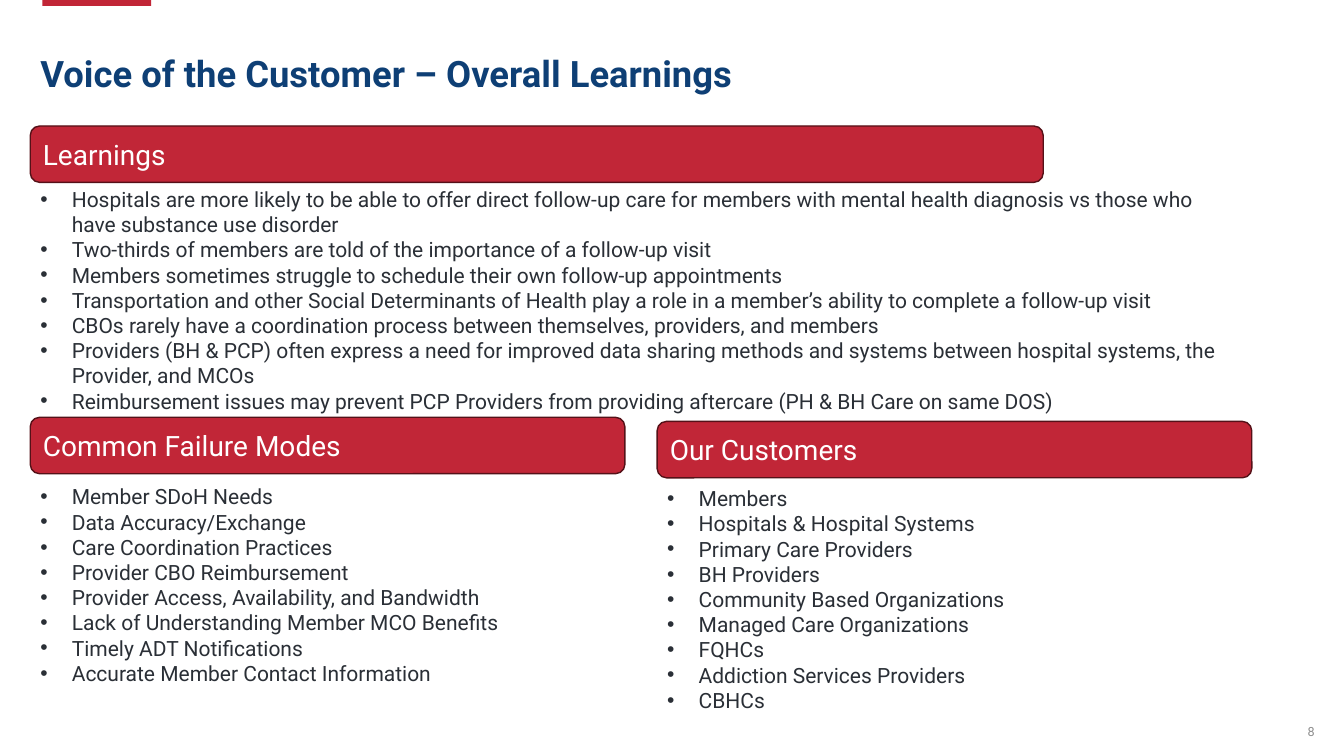
from pptx import Presentation
from pptx.dml.color import RGBColor
from pptx.enum.shapes import MSO_SHAPE as Kind
from pptx.enum.text import MSO_ANCHOR as Anchor, MSO_AUTO_SIZE as Fit, PP_ALIGN as Align
from pptx.oxml.ns import qn
from pptx.util import Pt
from lxml.etree import SubElement

RED, EDGE, NAVY, INK, GRAY, WHITE = "C12637", "551118", "0E3F75", "2A2F36", "8C8C8C", "FFFFFF"
LEFT, MID, HALF = 21.6, 469.4, 424.8


def color(fmt, code):
    fmt.rgb = RGBColor.from_string(code)


def style(par, size, code, bold=False, align=Align.LEFT):
    par.alignment = align
    par.space_before = Pt(0)
    for run in par.runs:
        run.font.name = "Roboto"
        run.font.size = Pt(size)
        run.font.bold = bold
        color(run.font.color, code)


deck = Presentation()
deck.slide_width, deck.slide_height = Pt(960), Pt(540)
slide = deck.slides.add_slide(deck.slide_layouts[4])
shapes = slide.shapes
holders = {h.placeholder_format.idx: h for h in slide.placeholders}

# Accent tab at the top edge
tab = shapes.add_shape(Kind.RECTANGLE, Pt(30.2), Pt(-3), Pt(77.8), Pt(7.2))
tab.shadow.inherit = False
tab.fill.solid()
color(tab.fill.fore_color, RED)
tab.line.fill.background()

# Title
title = shapes.title
title.left, title.top, title.width, title.height = Pt(LEFT), Pt(36.7), Pt(529.2), Pt(40.3)
frame = title.text_frame
frame.text = "Voice of the Customer – Overall Learnings"
frame.auto_size = Fit.NONE
frame.vertical_anchor = Anchor.TOP
frame.paragraphs[0].line_spacing = 0.9
style(frame.paragraphs[0], 26, NAVY, True)

# Bulleted lists: placeholder index, left, top, width, height, items
lists = [
    (1, LEFT, 129.6, 872.6, 208, [
        "Hospitals are more likely to be able to offer direct follow-up care for members "
        "with mental health diagnosis vs those who have substance use disorder",
        "Two-thirds of members are told of the importance of a follow-up visit",
        "Members sometimes struggle to schedule their own follow-up appointments",
        "Transportation and other Social Determinants of Health play a role in a "
        "member’s ability to complete a follow-up visit",
        "CBOs rarely have a coordination process between themselves, providers, and members",
        "Providers (BH & PCP) often express a need for improved data sharing methods and "
        "systems between hospital systems, the Provider, and MCOs",
        "Reimbursement issues may prevent PCP Providers from providing aftercare "
        "(PH & BH Care on same DOS)",
    ]),
    (2, LEFT, 342, HALF, 152.6, [
        "Member SDoH Needs",
        "Data Accuracy/Exchange",
        "Care Coordination Practices",
        "Provider CBO Reimbursement",
        "Provider Access, Availability, and Bandwidth",
        "Lack of Understanding Member MCO Benefits",
        "Timely ADT Notifications",
        "Accurate Member Contact Information",
    ]),
    (4, MID, 343.4, HALF, 170.6, [
        "Members",
        "Hospitals & Hospital Systems",
        "Primary Care Providers",
        "BH Providers",
        "Community Based Organizations",
        "Managed Care Organizations",
        "FQHCs",
        "Addiction Services Providers",
        "CBHCs",
    ]),
]
for idx, x, y, w, h, items in lists:
    body = holders[idx]
    body.left, body.top, body.width, body.height = Pt(x), Pt(y), Pt(w), Pt(h)
    frame = body.text_frame
    frame.text = "\n".join(items)
    frame.auto_size = Fit.NONE
    frame.vertical_anchor = Anchor.TOP
    for par in frame.paragraphs:
        style(par, 15, INK)
        props = par._p.get_or_add_pPr()
        props.set("marL", str(Pt(22.5)))
        props.set("indent", str(Pt(-22.5)))
        SubElement(props, qn("a:buFont")).set("typeface", "Arial")
        SubElement(props, qn("a:buChar")).set("char", "•")

# Spare placeholder
spare = holders[3].element
spare.getparent().remove(spare)

# Section bars
bars = [
    ("Learnings", LEFT, 90, 723.6),
    ("Common Failure Modes", LEFT, 298.1, HALF),
    ("Our Customers", MID, 301, HALF),
]
for label, x, y, w in bars:
    bar = shapes.add_shape(Kind.ROUNDED_RECTANGLE, Pt(x), Pt(y), Pt(w), Pt(40.3))
    bar.shadow.inherit = False
    bar.fill.solid()
    color(bar.fill.fore_color, RED)
    color(bar.line.color, EDGE)
    bar.line.width = Pt(1)
    bar.text_frame.text = label
    bar.text_frame.vertical_anchor = Anchor.MIDDLE
    style(bar.text_frame.paragraphs[0], 20, WHITE)

# Page number
page = shapes.add_textbox(Pt(917.3), Pt(514.1), Pt(28.8), Pt(17.3))
frame = page.text_frame
frame.text = "8"
frame.word_wrap = True
frame.vertical_anchor = Anchor.MIDDLE
style(frame.paragraphs[0], 9, GRAY, align=Align.RIGHT)

deck.save("out.pptx")
